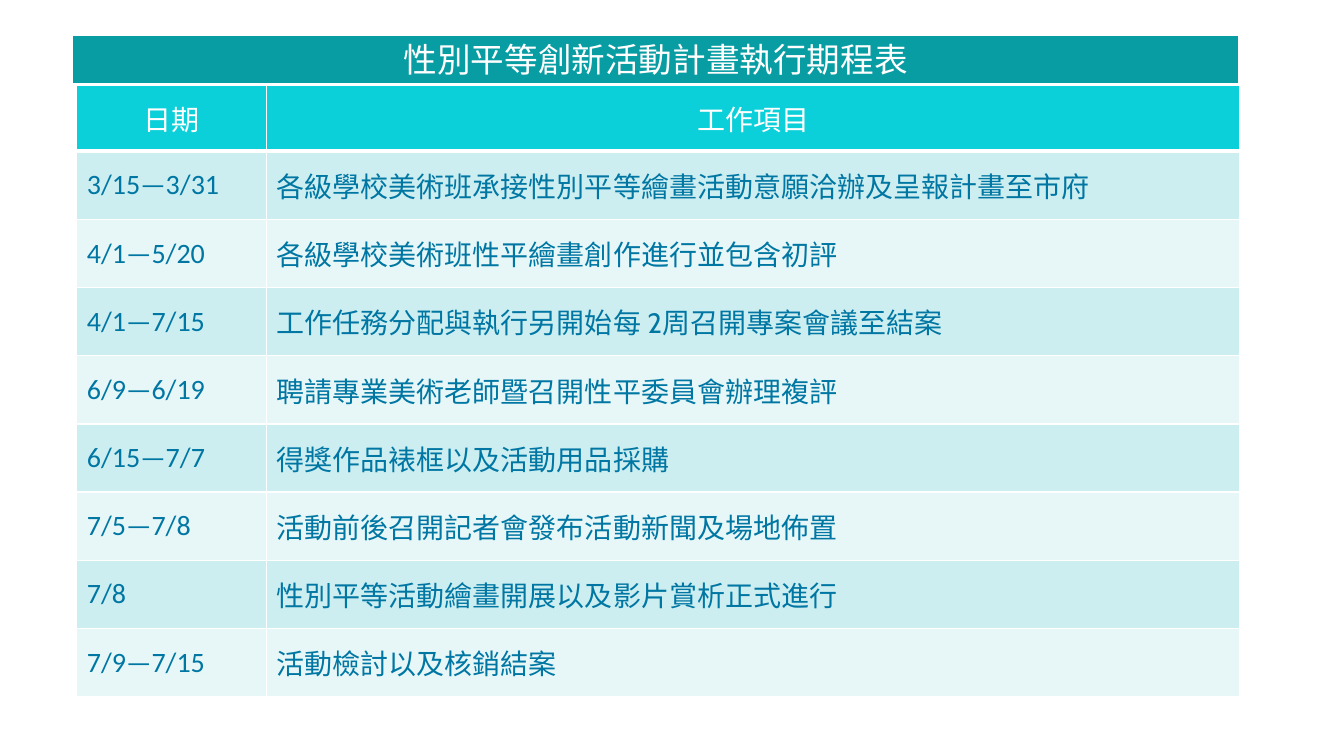
from lxml.etree import SubElement
from pptx import Presentation
from pptx.dml.color import RGBColor
from pptx.enum.shapes import MSO_SHAPE as Shape
from pptx.enum.text import MSO_ANCHOR as Anchor, PP_ALIGN as Align
from pptx.oxml.ns import qn
from pptx.util import Pt

TITLE = "性別平等創新活動計畫執行期程表"
HEADINGS = ("日期", "工作項目")
SCHEDULE = [
    ("3/15—3/31", "各級學校美術班承接性別平等繪畫活動意願洽辦及呈報計畫至市府"),
    ("4/1—5/20", "各級學校美術班性平繪畫創作進行並包含初評"),
    ("4/1—7/15", "工作任務分配與執行另開始每 2周召開專案會議至結案"),
    ("6/9—6/19", "聘請專業美術老師暨召開性平委員會辦理複評"),
    ("6/15—7/7", "得獎作品裱框以及活動用品採購"),
    ("7/5—7/8", "活動前後召開記者會發布活動新聞及場地佈置"),
    ("7/8", "性別平等活動繪畫開展以及影片賞析正式進行"),
    ("7/9—7/15", "活動檢討以及核銷結案"),
]
WHITE, TITLE_FILL, HEADING_FILL, BODY_TEXT = "FFFFFF", "089CA3", "0BD0D9", "0076A3"
BANDS = ("CCEEF1", "E7F7F8")
TITLE_BOX = (51.1, 24.5, 834.5, 36)
TABLE_LEFT, TABLE_TOP = 54.9, 61.2
COLUMN_WIDTHS = (135.4, 695.5)
HEADING_HEIGHT, ROW_HEIGHT = 46.8, 48.7


def color(hex_code):
    return RGBColor.from_string(hex_code)


def fill_solid(target, hex_code):
    target.fill.solid()
    target.fill.fore_color.rgb = color(hex_code)


def write(frame, text, size, font, hex_code, align):
    paragraph = frame.paragraphs[0]
    paragraph.alignment = align
    run = paragraph.add_run()
    run.text = text
    run.font.size = Pt(size)
    run.font.name = font
    run.font.bold = False
    run.font.color.rgb = color(hex_code)


def draw_borders(cell, top, bottom):
    """Draw white cell borders; must run before the cell is filled."""
    properties = cell._tc.get_or_add_tcPr()
    for side, width in (("L", 1), ("R", 1), ("T", top), ("B", bottom)):
        line = SubElement(properties, qn(f"a:ln{side}"), w=str(Pt(width)))
        solid = SubElement(line, qn("a:solidFill"))
        SubElement(solid, qn("a:srgbClr"), val=WHITE)


def add_title(slide):
    banner = slide.shapes.add_shape(Shape.RECTANGLE, *map(Pt, TITLE_BOX))
    banner.shadow.inherit = False
    fill_solid(banner, TITLE_FILL)
    banner.line.color.rgb = color(WHITE)
    banner.line.width = Pt(2)
    banner.text_frame.word_wrap = True
    banner.text_frame.vertical_anchor = Anchor.MIDDLE
    write(banner.text_frame, TITLE, 24, "Cabin", WHITE, Align.CENTER)


def add_schedule(slide):
    rows = [HEADINGS, *SCHEDULE]
    heights = [HEADING_HEIGHT] + [ROW_HEIGHT] * len(SCHEDULE)
    bounds = (TABLE_LEFT, TABLE_TOP, sum(COLUMN_WIDTHS), sum(heights))
    table = slide.shapes.add_table(len(rows), len(HEADINGS), *map(Pt, bounds)).table
    for column, width in zip(table.columns, COLUMN_WIDTHS):
        column.width = Pt(width)
    for r, (entries, height) in enumerate(zip(rows, heights)):
        table.rows[r].height = Pt(height)
        is_heading = r == 0
        for c, entry in enumerate(entries):
            cell = table.cell(r, c)
            cell.vertical_anchor = Anchor.MIDDLE
            draw_borders(cell, 3 if r == 1 else 1, 3 if is_heading else 1)
            if is_heading:
                fill_solid(cell, HEADING_FILL)
                write(cell.text_frame, entry, 20, "Cabin", WHITE, Align.CENTER)
            else:
                fill_solid(cell, BANDS[(r - 1) % 2])
                font = "Calibri" if c == 0 else "Cabin"
                write(cell.text_frame, entry, 20, font, BODY_TEXT, Align.LEFT)


def main():
    deck = Presentation()
    deck.slide_width, deck.slide_height = Pt(960), Pt(540)
    slide = deck.slides.add_slide(deck.slide_layouts[6])
    add_title(slide)
    add_schedule(slide)
    deck.save("out.pptx")


if __name__ == "__main__":
    main()
